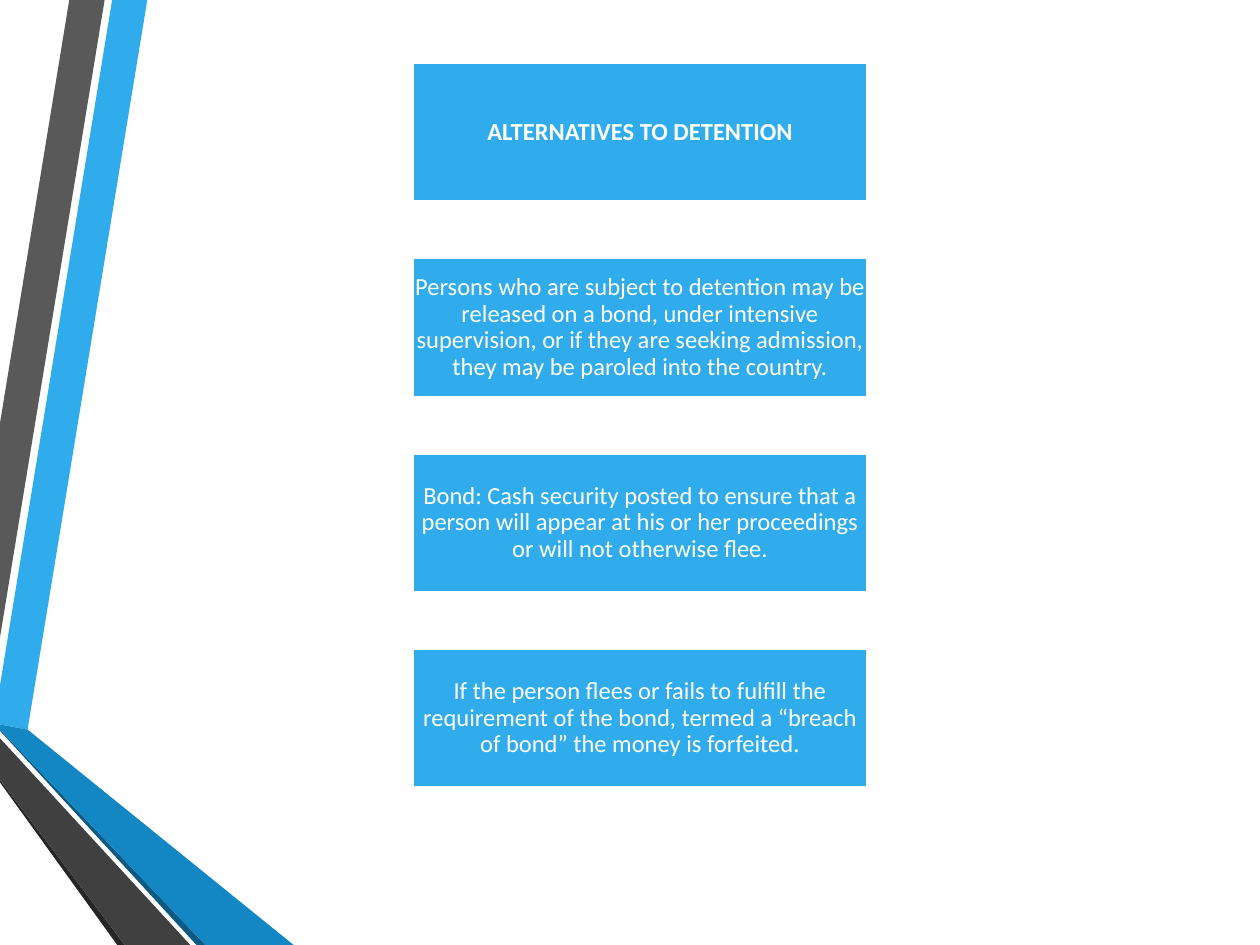
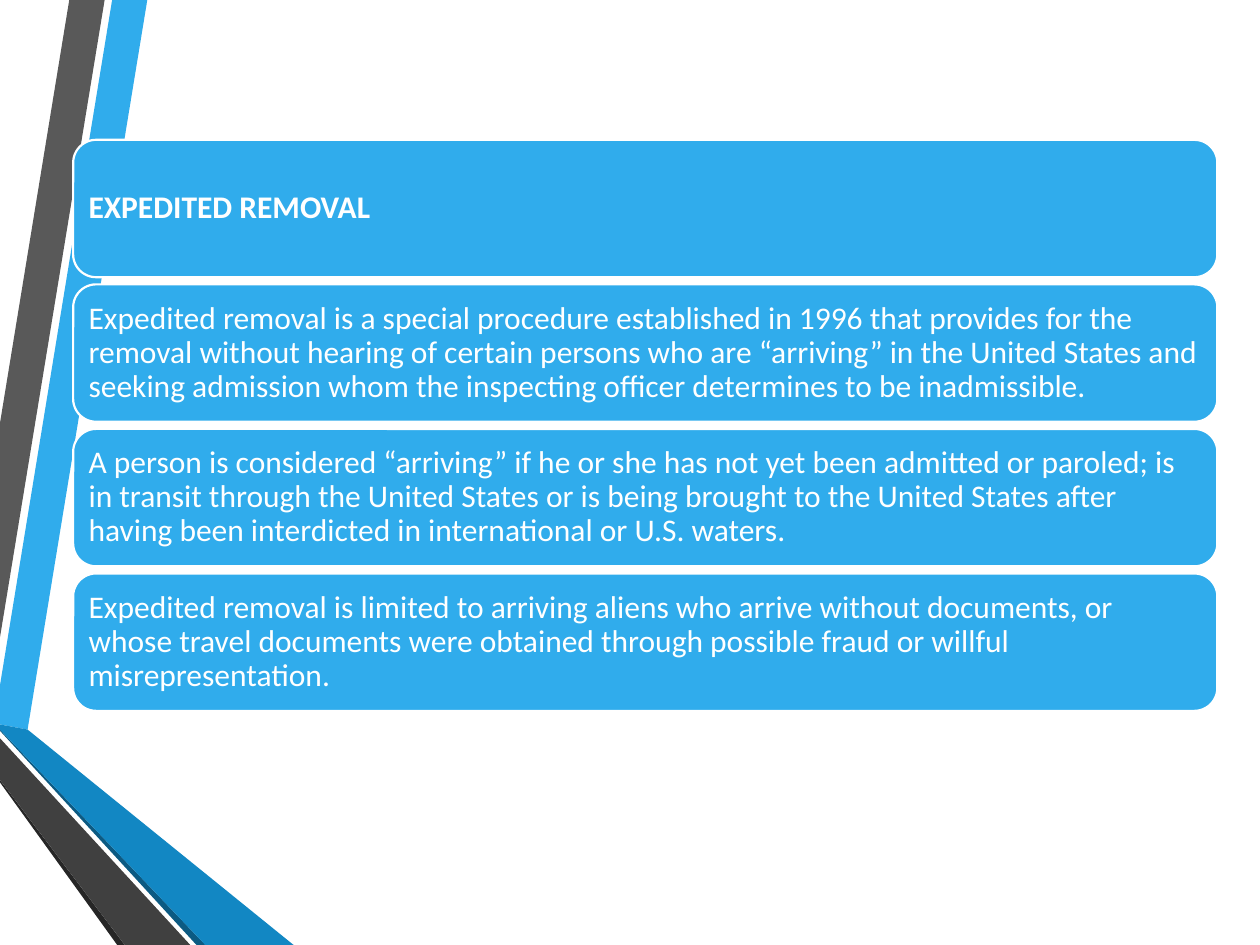
from pptx import Presentation
from pptx.dml.color import RGBColor
from pptx.enum import shapes as kinds, text as txt
from pptx.util import Pt

HUES = {
    "blue": "30ACEC", "gray": "595959", "black": "262626", "navy": "0C5A82",
    "deep": "1287C3", "dark": "404040", "white": "FFFFFF",
}

# Ribbon outlines on the left edge, in points
BANDS = [
    ("blue", [(0, 391.7), (0, 414), (15.8, 416.9), (84.2, 0), (64.1, 0)]),
    ("gray", [(59.8, 0), (39.6, 0), (0, 241.9), (0, 364.3)]),
    ("black", [(0, 445.7), (0, 447.1), (67, 540), (71.3, 540)]),
    ("navy", [(0, 416.9), (0, 417.6), (112.3, 540), (117.4, 540)]),
    ("deep", [(0, 416.9), (117.4, 540), (167.8, 540), (15.8, 416.9), (0, 414)]),
    ("dark", [(0, 445.7), (71.3, 540), (108.7, 540), (0, 421.9)]),
]

# Each slide: box form and stack, text style, title, body texts
PAGES = [
    {
        "form": kinds.MSO_SHAPE.RECTANGLE, "left": 236.2, "top": 36,
        "width": 259.2, "height": 79.2, "step": 111.6,
        "size": 14, "align": txt.PP_ALIGN.CENTER, "inset": 0.7, "edge": 0,
        "title": "ALTERNATIVES TO DETENTION",
        "body": [
            "Persons who are subject to detention may be released on a bond, under intensive "
            "supervision, or if they are seeking admission, they may be paroled into the country.",
            "Bond: Cash security posted to ensure that a person will appear at his or her "
            "proceedings or will not otherwise flee.",
            "If the person flees or fails to fulfill the requirement of the bond, termed a "
            "“breach of bond” the money is forfeited.",
        ],
    },
    {
        "form": kinds.MSO_SHAPE.ROUNDED_RECTANGLE, "left": 41.8, "top": 79.9,
        "width": 653.8, "height": 78.5, "step": 82.6,
        "size": 18, "align": txt.PP_ALIGN.LEFT, "inset": 5, "edge": 3.8,
        "title": "EXPEDITED REMOVAL",
        "body": [
            "Expedited removal is a special procedure established in 1996 that provides for the "
            "removal without hearing of certain persons who are “arriving” in the United States "
            "and seeking admission whom the inspecting officer determines to be inadmissible.",
            "A person is considered “arriving” if he or she has not yet been admitted or paroled; "
            "is in transit through the United States or is being brought to the United States "
            "after having been interdicted in international or U.S. waters.",
            "Expedited removal is limited to arriving aliens who arrive without documents, or "
            "whose travel documents were obtained through possible fraud or willful "
            "misrepresentation.",
        ],
    },
]


def paint(shape, hue):
    shape.shadow.inherit = False
    shape.fill.solid()
    shape.fill.fore_color.rgb = RGBColor.from_string(HUES[hue])


def write(shape, words, page, bold=False):
    frame = shape.text_frame
    frame.word_wrap = True
    frame.auto_size = txt.MSO_AUTO_SIZE.NONE
    frame.vertical_anchor = txt.MSO_ANCHOR.MIDDLE
    frame.margin_left = frame.margin_right = Pt(page["inset"])
    frame.margin_top = frame.margin_bottom = Pt(page["inset"])
    para = frame.paragraphs[0]
    para.alignment = page["align"]
    para.line_spacing = 0.9
    run = para.add_run()
    run.text = words
    run.font.name = "Calibri"
    run.font.size = Pt(page["size"])
    run.font.bold = bold
    run.font.color.rgb = RGBColor.from_string(HUES["white"])


deck = Presentation()
deck.slide_width, deck.slide_height = Pt(720), Pt(540)
layout = deck.slide_layouts.get_by_name("Title Only")
slides = [deck.slides.add_slide(layout) for page in PAGES]

# Ribbons: drawn once, then moved to the shared layout
for hue, dots in BANDS:
    dots = [(Pt(x), Pt(y)) for x, y in dots]
    pen = slides[0].shapes.build_freeform(*dots[0])
    pen.add_line_segments(dots[1:], close=True)
    band = pen.convert_to_shape()
    paint(band, hue)
    band.line.fill.background()
    layout.shapes.element.append(band.element)

for slide, page in zip(slides, PAGES):
    # Stack of boxes; the first one backs the title
    for i, words in enumerate([None] + page["body"]):
        box = slide.shapes.add_shape(
            page["form"], Pt(page["left"]), Pt(page["top"] + i * page["step"]),
            Pt(page["width"]), Pt(page["height"]))
        paint(box, "blue")
        box.line.color.rgb = RGBColor.from_string(HUES["white"])
        box.line.width = Pt(1.25)
        if words:
            write(box, words, page)

    # Title, laid over the first box
    title, edge = slide.shapes.title, page["edge"]
    title.left, title.top = Pt(page["left"] + edge), Pt(page["top"] + edge)
    title.width = Pt(page["width"] - 2 * edge)
    title.height = Pt(page["height"] - 2 * edge)
    write(title, page["title"], page, bold=True)
    slide.shapes.element.append(title.element)

deck.save("out.pptx")
